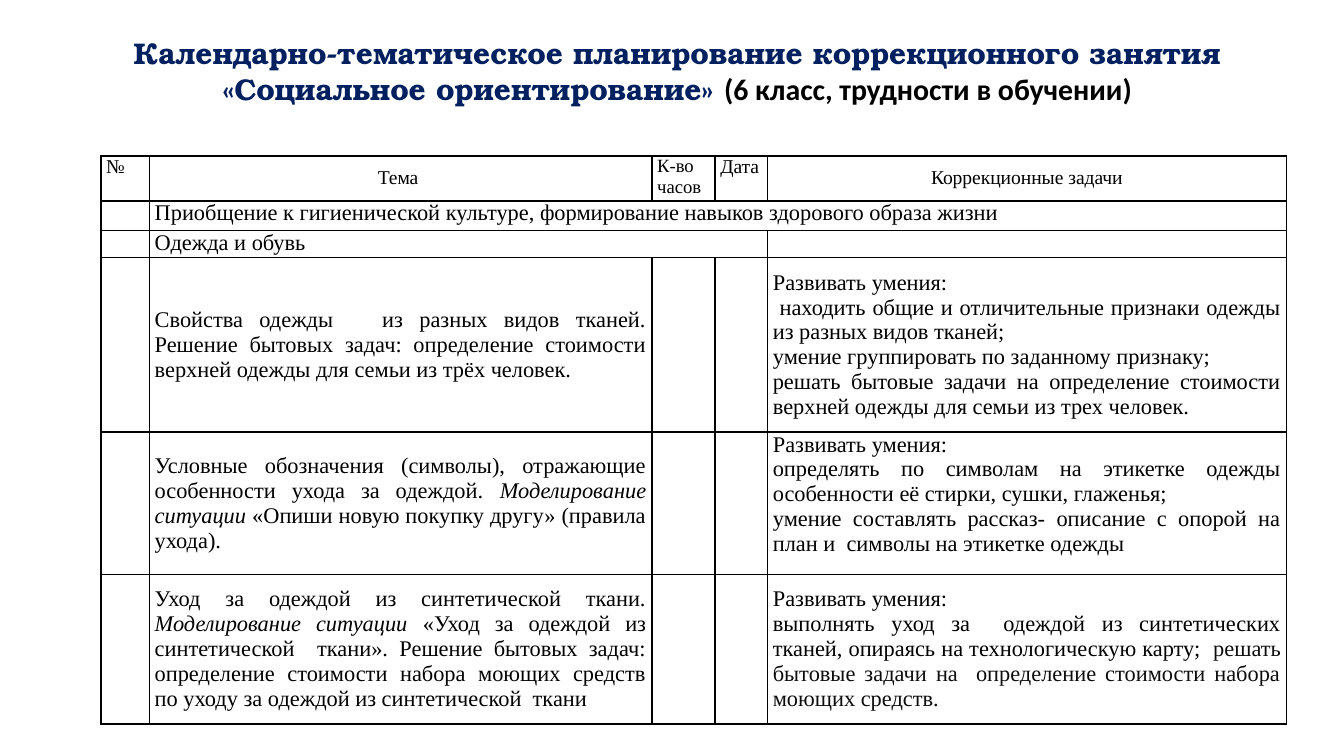
from dataclasses import dataclass

from lxml import etree
from pptx import Presentation
from pptx.dml.color import RGBColor
from pptx.enum.text import MSO_ANCHOR, PP_ALIGN
from pptx.oxml.ns import qn
from pptx.util import Pt

TOP, MIDDLE = MSO_ANCHOR.TOP, MSO_ANCHOR.MIDDLE
CENTER, JUSTIFY = PP_ALIGN.CENTER, PP_ALIGN.JUSTIFY


@dataclass(frozen=True)
class Theme:
    """Colours, fonts and type sizes of the slide."""
    navy: str = "002060"
    black: str = "000000"
    soft: str = "0D0D0D"
    head: str = "TeX Gyre Bonum"
    note: str = "Calibri"
    body: str = "Times New Roman"
    title: float = 16
    text: float = 12
    label: float = 10.5
    small: float = 10
    line: float = 1


def write(frame, paras, align=JUSTIFY, **base):
    """Fill a frame with paragraphs made of strings or (string, format) pairs."""
    for i, para in enumerate(paras):
        p = frame.paragraphs[0] if i == 0 else frame.add_paragraph()
        p.alignment = align
        for piece in [para] if isinstance(para, str) else para:
            words, extra = (piece, {}) if isinstance(piece, str) else piece
            look = {**base, **extra}
            run = p.add_run()
            run.text = words
            run.font.name = look["font"]
            run.font.size = Pt(look["size"])
            run.font.bold = look.get("bold", False)
            run.font.italic = look.get("italic", False)
            run.font.color.rgb = RGBColor.from_string(look["color"])


class Page:
    """Holds the theme and the current slide."""

    def __init__(self, slide, theme):
        """Keep the slide and its theme."""
        self.slide, self.theme = slide, theme

    def title(self, box, para):
        """Add the centred heading."""
        frame = self.slide.shapes.add_textbox(*map(Pt, box)).text_frame
        frame.word_wrap = True
        frame.vertical_anchor = MIDDLE
        frame.margin_top, frame.margin_bottom = Pt(10), Pt(0)
        t = self.theme
        write(frame, [para], CENTER, font=t.head, size=t.title, color=t.navy, bold=True)

    def frame(self, cell):
        """Draw the four borders of a cell and clear its fill."""
        props = cell._tc.get_or_add_tcPr()
        for side in ("lnL", "lnR", "lnT", "lnB"):
            line = etree.SubElement(props, qn("a:" + side), w=str(Pt(self.theme.line)))
            fill = etree.SubElement(line, qn("a:solidFill"))
            etree.SubElement(fill, qn("a:srgbClr"), val=self.theme.black)
        cell.fill.background()

    def table(self, left, top, cols, rows, spans, cells):
        """Add a ruled table, with cells keyed by row and column."""
        t = self.theme
        area = map(Pt, (left, top, sum(cols), sum(rows)))
        table = self.slide.shapes.add_table(len(rows), len(cols), *area).table
        table.first_row = table.horz_banding = False
        for col, width in zip(table.columns, cols):
            col.width = Pt(width)
        for row, height in zip(table.rows, rows):
            row.height = Pt(height)
        for row, first, last in spans:
            table.cell(row, first).merge(table.cell(row, last))
        for r in range(len(rows)):
            for c in range(len(cols)):
                cell = table.cell(r, c)
                cell.margin_left = cell.margin_right = Pt(2.9)
                cell.margin_top = cell.margin_bottom = Pt(0)
                self.frame(cell)
                if (r, c) in cells:
                    paras, anchor, look = cells[r, c]
                    cell.vertical_anchor = anchor
                    base = {"font": t.body, "size": t.text, "color": t.black}
                    write(cell.text_frame, paras, **{**base, **look})
                else:
                    p = cell.text_frame.paragraphs[0]._p
                    etree.SubElement(p, qn("a:endParaRPr"), sz=str(t.small * 100))


def main():
    """Build the lesson plan slide."""
    deck = Presentation()
    deck.slide_width, deck.slide_height = Pt(720), Pt(405)
    t = Theme()
    page = Page(deck.slides.add_slide(deck.slide_layouts[6]), t)
    page.title((42.5, 10, 640.8, 45.4), [
        "Календарно-тематическое планирование коррекционного занятия «Социальное ориентирование» ",
        ("(6 класс, трудности в обучении)", {"font": t.note, "color": t.black}),
    ])

    label = {"size": t.label}
    mid = {**label, "align": CENTER}
    model = ("Моделирование ситуации ", {"italic": True})
    skills = "Развивать умения:"
    cells = {
        (0, 0): (["№"], TOP, label),
        (0, 1): (["Тема "], MIDDLE, mid),
        (0, 2): (["К-во", "часов"], TOP, {"size": t.small}),
        (0, 3): (["Дата "], TOP, label),
        (0, 4): (["Коррекционные задачи"], MIDDLE, mid),
        (1, 1): (["Приобщение к гигиенической культуре, формирование навыков "
                  "здорового образа жизни"], TOP, {}),
        (2, 1): (["Одежда и обувь"], TOP, {}),
        (3, 1): (["Свойства одежды   из разных видов тканей. Решение бытовых задач: "
                  "определение стоимости верхней одежды для семьи из трёх человек."], MIDDLE, {}),
        (3, 4): ([skills,
                  " находить общие и отличительные признаки одежды из разных видов тканей;",
                  "умение группировать по заданному признаку;",
                  "решать бытовые задачи на определение стоимости верхней одежды "
                  "для семьи из трех человек."], MIDDLE, {}),
        (4, 1): ([["Условные обозначения (символы), отражающие особенности ухода за одеждой. ",
                   model, "«Опиши новую покупку другу» (правила ухода)."]], MIDDLE, {}),
        (4, 4): ([skills,
                  "определять по символам на этикетке одежды особенности её стирки, "
                  "сушки, глаженья;",
                  "умение составлять рассказ- описание с опорой на план и  символы "
                  "на этикетке одежды"], TOP, {}),
        (5, 1): ([["Уход за одеждой из синтетической ткани. ", model,
                   "«Уход за одеждой из синтетической  ткани». Решение бытовых задач: "
                   "определение стоимости набора моющих средств по уходу за одеждой "
                   "из синтетической  ткани"]], MIDDLE, {}),
        (5, 4): ([skills,
                  ["выполнять уход за  одеждой из синтетических тканей, опираясь "
                   "на технологическую карту; ",
                   (" решать бытовые задачи на  определение стоимости набора "
                    "моющих средств. ", {"color": t.soft})]], MIDDLE, {}),
    }
    page.table(54, 83.5, (26, 269.2, 33.8, 28.2, 278), (22, 16, 13.2, 93.5, 76.3, 80),
               ((1, 1, 4), (2, 1, 3)), cells)
    deck.save("out.pptx")


if __name__ == "__main__":
    main()
